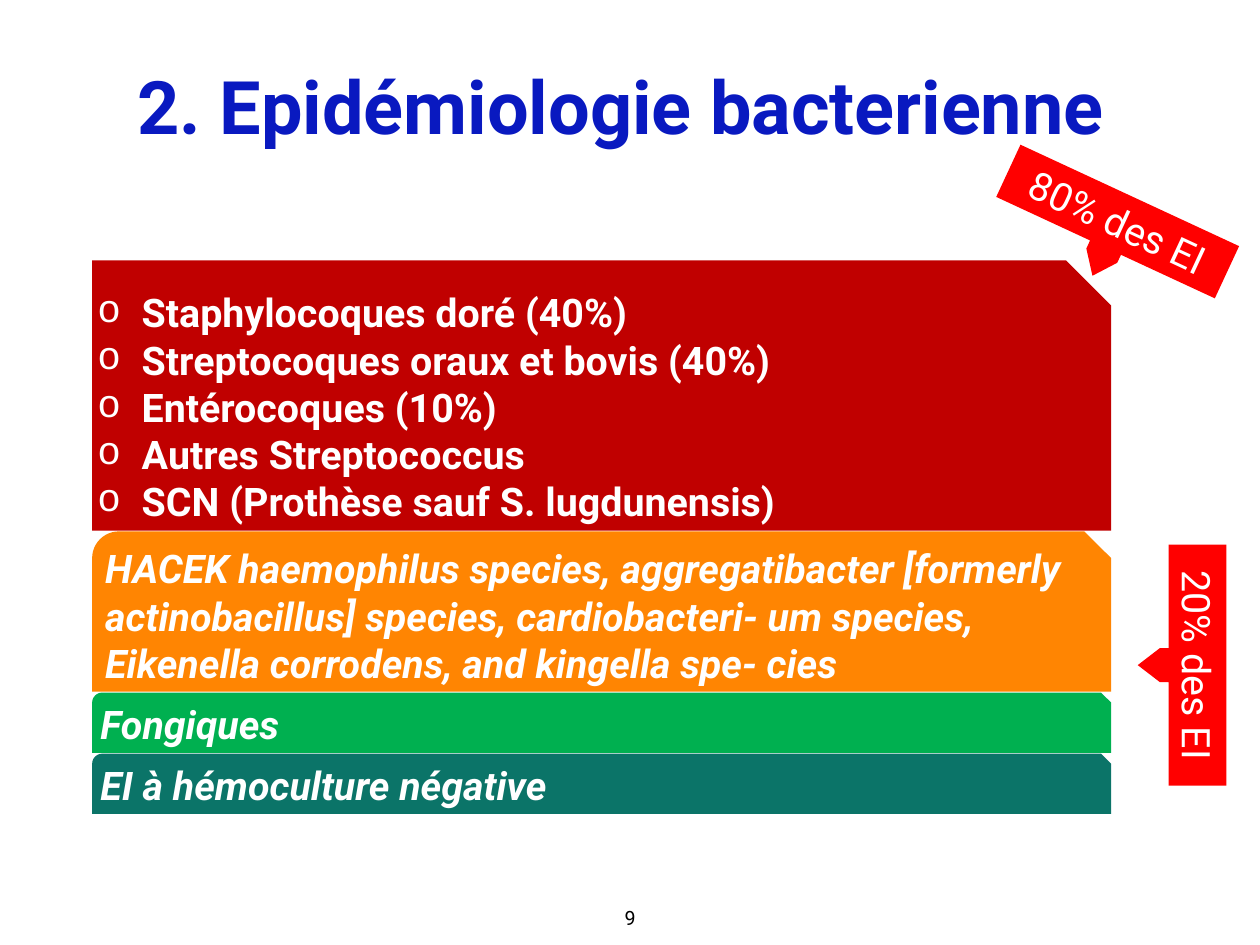
from lxml import etree
from pptx import Presentation
from pptx.dml.color import RGBColor
from pptx.enum.shapes import MSO_SHAPE
from pptx.enum.text import MSO_ANCHOR, PP_ALIGN
from pptx.oxml.ns import qn
from pptx.util import Pt

PX = 9144  # 100 px to the inch
FONT = "Roboto"
SNIP, ROUND = MSO_SHAPE.SNIP_1_RECTANGLE, MSO_SHAPE.SNIP_ROUND_RECTANGLE
CALLOUT = MSO_SHAPE.DOWN_ARROW_CALLOUT
MIDDLE, TOP = MSO_ANCHOR.MIDDLE, MSO_ANCHOR.TOP
LEFT, CENTER = PP_ALIGN.LEFT, PP_ALIGN.CENTER

BLACK = RGBColor(0x00, 0x00, 0x00)
WHITE = RGBColor(0xFF, 0xFF, 0xFF)
BLUE = RGBColor(0x09, 0x19, 0xC0)
CRIMSON = RGBColor(0xC0, 0x00, 0x00)
ORANGE = RGBColor(0xFF, 0x85, 0x02)
GREEN = RGBColor(0x00, 0xB0, 0x50)
TEAL = RGBColor(0x0B, 0x74, 0x68)
RED = RGBColor(0xFF, 0x00, 0x00)

GERMS = [
    "Staphylocoques doré (40%)",
    "Streptocoques oraux et bovis (40%)",
    "Entérocoques (10%)",
    "Autres Streptococcus",
    "SCN (Prothèse sauf S. lugdunensis)",
]
HACEK = ("HACEK haemophilus species, aggregatibacter [formerly actinobacillus] "
         "species, cardiobacteri- um species, Eikenella corrodens, and kingella "
         "spe- cies")
# Height, fill and text of the bands below the list
BANDS = [
    (181, ORANGE, HACEK),
    (68, GREEN, "Fongiques"),
    (68, TEAL, "EI à hémoculture négative"),
]


def emu(box):
    return [n * PX for n in box]


def write(shape, lines, size=32, color=WHITE, bold=False, italic=False,
          align=LEFT, anchor=MIDDLE, wrap=True):
    frame = shape.text_frame
    frame.text = "\n".join(lines)
    frame.word_wrap = wrap
    frame.vertical_anchor = anchor
    frame.margin_left = frame.margin_right = 6 * PX
    frame.margin_top = frame.margin_bottom = 6 * PX
    for para in frame.paragraphs:
        para.alignment = align
        font = para.font
        font.name, font.size = FONT, Pt(size)
        font.bold, font.italic = bold, italic
        font.color.rgb = color


def block(slide, kind, box, fill):
    shape = slide.shapes.add_shape(kind, *emu(box))
    shape.shadow.inherit = False
    shape.fill.solid()
    shape.fill.fore_color.rgb = fill
    shape.line.fill.background()
    return shape


def bullet(para, indent):
    props = para._p.get_or_add_pPr()
    props.set("marL", str(indent * PX))
    props.set("indent", str(-indent * PX))
    mark = etree.Element(qn("a:buFont"), typeface="Courier New")
    char = etree.Element(qn("a:buChar"), char="o")
    for at, node in enumerate((mark, char)):
        props.insert(at, node)


def title(slide, box):
    shape = slide.shapes.title
    shape.left, shape.top, shape.width, shape.height = emu(box)
    write(shape, ["2. Epidémiologie bacterienne "], 60, BLUE, bold=True,
          align=CENTER)


def germs(slide, box):
    # Bulleted list of the main germs
    left, top, width, _ = box
    tall, gap = 305, 1
    shape = block(slide, SNIP, (left, top, width, tall), CRIMSON)
    write(shape, GERMS, bold=True)
    for para in shape.text_frame.paragraphs:
        bullet(para, 50)

    # Bands stacked underneath
    top += tall + gap
    for tall, fill, text in BANDS:
        shape = block(slide, ROUND, (left, top, width, tall), fill)
        write(shape, [text], bold=True, italic=True)
        top += tall + gap


def share(slide, box, turn, text):
    shape = block(slide, CALLOUT, box, RED)
    for at, part in enumerate((0.5, 0.192, 0.25, 0.65)):
        shape.adjustments[at] = part
    shape.rotation = turn
    write(shape, [text], align=CENTER)


def number(slide, box):
    shape = slide.shapes.add_textbox(*emu(box))
    write(shape, ["9"], 16, BLACK, align=CENTER, anchor=TOP, wrap=False)


def main():
    deck = Presentation()
    deck.slide_width, deck.slide_height = emu((1422, 1067))
    slide = deck.slides.add_slide(deck.slide_layouts[5])
    title(slide, (104, 28, 1214, 181))
    germs(slide, (104, 294, 1150, 626))
    share(slide, (1118, 216, 272, 100), 24.9, "80% des EI")
    share(slide, (1198, 701, 272, 100), 90, "20% des EI")
    number(slide, (687, 1017, 48, 38))
    deck.save("out.pptx")


if __name__ == "__main__":
    main()
